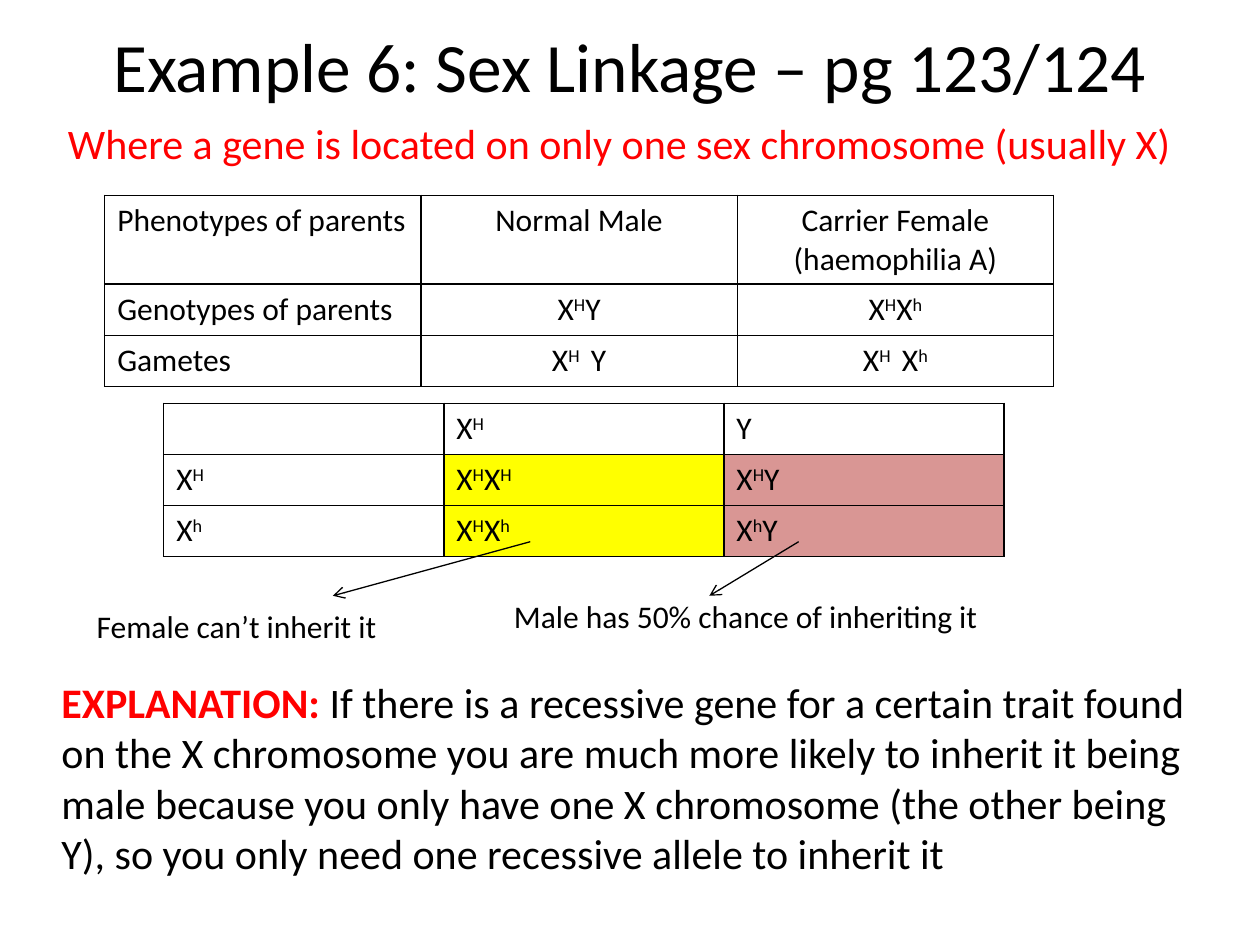
from lxml.etree import SubElement
from pptx import Presentation
from pptx.dml.color import RGBColor
from pptx.enum.shapes import MSO_CONNECTOR
from pptx.enum.text import MSO_ANCHOR, PP_ALIGN
from pptx.oxml.ns import qn
from pptx.util import Cm, Pt

BLACK = RGBColor(0x00, 0x00, 0x00)
RED = RGBColor(0xFF, 0x00, 0x00)
YELLOW = RGBColor(0xFF, 0xFF, 0x00)
PINK = RGBColor(0xD9, 0x96, 0x94)
FONT = "Calibri"

PARENTS = [
    ["Phenotypes of parents", "Normal Male", "Carrier Female\n(haemophilia A)"],
    ["Genotypes of parents", "X^H^Y", "X^H^X^h"],
    ["Gametes", "X^H ^ Y", "X^H ^ X^h"],
]
OFFSPRING = [
    ["", "X^H", "Y"],
    ["X^H", "X^H^X^H", "X^H^Y"],
    ["X^h", "X^H^X^h", "X^h^Y"],
]


def add_run(p, text, size=18, color=BLACK, bold=False):
    r = p.add_run()
    r.text = text
    r.font.name = FONT
    r.font.size = Pt(size)
    r.font.color.rgb = color
    r.font.bold = bold
    return r


def add_allele_text(p, text):
    for i, part in enumerate(text.split("^")):
        if part:
            r = add_run(p, part)
            if i % 2:
                r.font._element.set("baseline", "30000")


def place_title(s, text, left, top, width, height):
    sp = s.shapes.title
    sp.left, sp.top, sp.width, sp.height = Cm(left), Cm(top), Cm(width), Cm(height)
    tf = sp.text_frame
    tf.vertical_anchor = MSO_ANCHOR.MIDDLE
    p = tf.paragraphs[0]
    p.alignment = PP_ALIGN.CENTER
    add_run(p, text, 39.6)


def add_text(s, left, top, width, height, align=PP_ALIGN.LEFT):
    tf = s.shapes.add_textbox(Cm(left), Cm(top), Cm(width), Cm(height)).text_frame
    tf.word_wrap = True
    p = tf.paragraphs[0]
    p.alignment = align
    return p


def add_borders(cell):
    tc_pr = cell._tc.get_or_add_tcPr()
    for i, side in enumerate(("a:lnL", "a:lnR", "a:lnT", "a:lnB")):
        ln = tc_pr.makeelement(qn(side), {"w": str(Pt(1))})
        fill = SubElement(ln, qn("a:solidFill"))
        SubElement(fill, qn("a:srgbClr"), val=str(BLACK))
        tc_pr.insert(i, ln)


def add_grid(s, rows, left, top, width, row_heights, aligns, fills):
    table = s.shapes.add_table(len(rows), len(rows[0]), Cm(left), Cm(top),
                               Cm(width), Cm(sum(row_heights))).table
    table.first_row = False
    table.horz_banding = False
    for i, (row, height) in enumerate(zip(rows, row_heights)):
        table.rows[i].height = Cm(height)
        for j, text in enumerate(row):
            cell = table.cell(i, j)
            color = fills[j] if i else None
            if color is None:
                cell.fill.background()
            else:
                cell.fill.solid()
                cell.fill.fore_color.rgb = color
            add_borders(cell)
            tf = cell.text_frame
            for k, line in enumerate(text.split("\n")):
                p = tf.add_paragraph() if k else tf.paragraphs[0]
                p.alignment = aligns[j]
                p.font.size = Pt(18)
                add_allele_text(p, line)


def add_arrow(s, x1, y1, x2, y2):
    line = s.shapes.add_connector(MSO_CONNECTOR.STRAIGHT, Cm(x1), Cm(y1), Cm(x2), Cm(y2))
    line.line.color.rgb = BLACK
    line.line.width = Pt(0.75)
    SubElement(line.line._get_or_add_ln(), qn("a:tailEnd"), type="arrow")
    SubElement(line._element.spPr, qn("a:effectLst"))


def add_outcomes(s, left, top):
    add_arrow(s, left + 8.99, top, left + 5.01, top + 1.09)
    add_run(add_text(s, left, top + 1.2, 6.6, 1.02), "Female can’t inherit it")
    add_arrow(s, left + 14.4, top, left + 12.6, top + 1.09)
    add_run(add_text(s, left + 8.41, top + 0.99, 10.39, 1.02),
            "Male has 50% chance of inheriting it")


def add_explanation(s, left, top, width, height):
    p = add_text(s, left, top, width, height)
    add_run(p, "EXPLANATION:", 24, RED, True)
    add_run(p, " If there is a recessive gene for a certain trait found on the X "
               "chromosome you are much more likely to inherit it being male because "
               "you only have one X chromosome (the other being Y), so you only need "
               "one recessive allele to inherit it", 24)


def main():
    prs = Presentation()
    prs.slide_width, prs.slide_height = Cm(25.4), Cm(19.05)
    s = prs.slides.add_slide(prs.slide_layouts[5])
    place_title(s, "Example 6: Sex Linkage – pg 123/124", 1.27, -0.28, 22.86, 3.18)
    add_run(add_text(s, 0.89, 2.24, 23.19, 1.27, PP_ALIGN.CENTER),
            "Where a gene is located on only one sex chromosome (usually X)", 24, RED)
    add_grid(s, PARENTS, 2.11, 3.94, 19.13, [1.79, 1.03, 1.03],
             [PP_ALIGN.LEFT, PP_ALIGN.CENTER, PP_ALIGN.CENTER], [None] * 3)
    add_grid(s, OFFSPRING, 3.3, 8.13, 16.94, [1.03] * 3,
             [PP_ALIGN.LEFT] * 3, [None, YELLOW, PINK])
    add_outcomes(s, 1.7, 10.92)
    add_explanation(s, 0.99, 13.51, 23.7, 4.37)
    prs.save("out.pptx")


if __name__ == "__main__":
    main()
